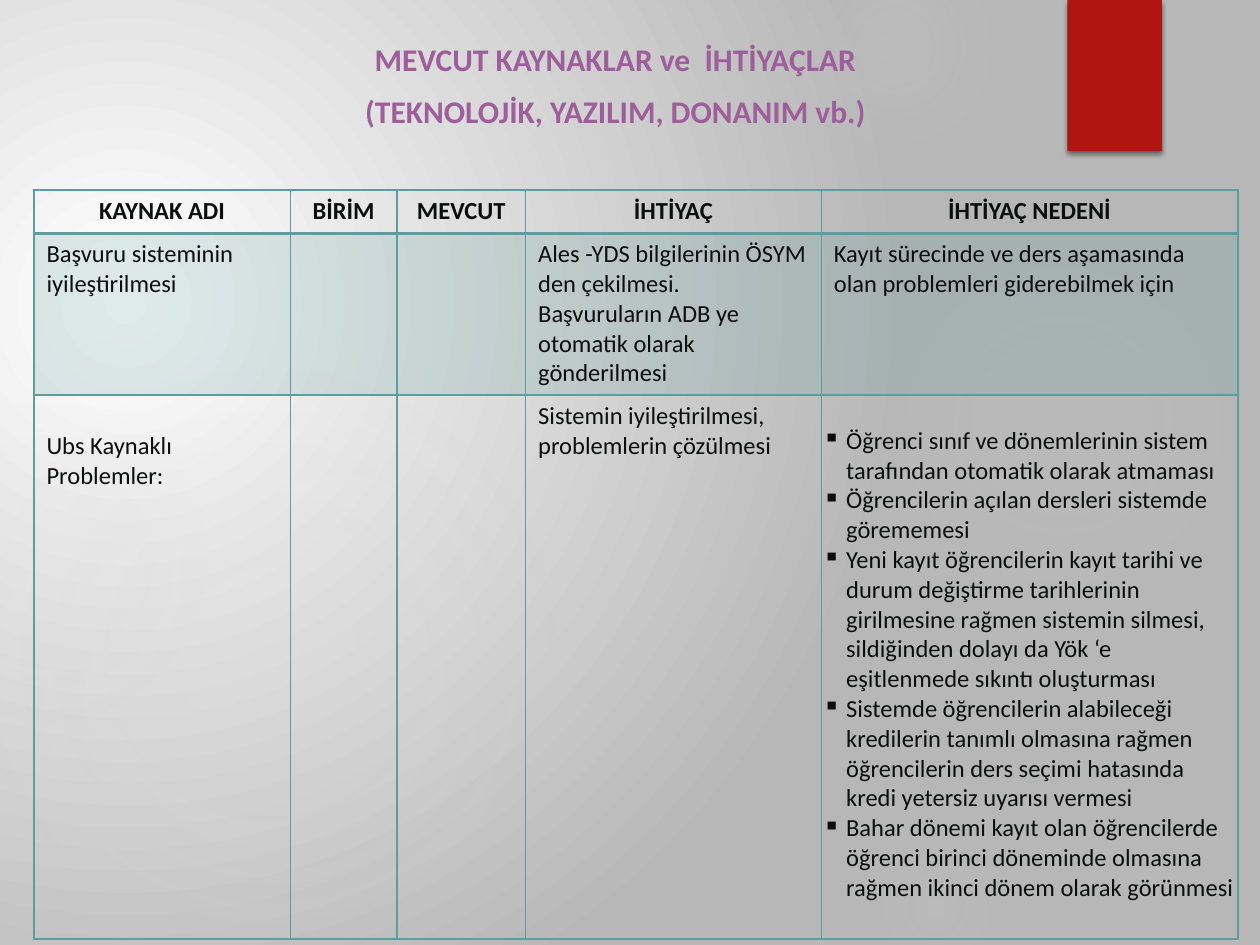
from dataclasses import dataclass

from lxml.etree import SubElement as Sub
from pptx import Presentation
from pptx.dml.color import RGBColor as RGB
from pptx.enum.shapes import MSO_SHAPE as SHAPE
from pptx.enum.text import MSO_ANCHOR as ANCHOR, MSO_AUTO_SIZE as AUTO, PP_ALIGN as ALIGN
from pptx.oxml.ns import qn
from pptx.util import Pt


@dataclass(frozen=True)
class Theme:
    font: str = "Calibri"
    title_size: int = 18
    body_size: int = 14
    title: str = "9E5E9B"
    text: str = "0C0D0D"
    accent: str = "B01513"
    line: str = "5F9C9D"
    glow: str = "D9D9D9"
    light: str = "FFFFFF"
    dark: str = "B7B7B7"
    shadow: str = "000000"


def add_color(parent, color, alpha=100):
    clr = Sub(parent, qn("a:srgbClr"), val=color)
    if alpha < 100:
        Sub(clr, qn("a:alpha"), val=str(alpha * 1000))


class Deck:
    def __init__(self, prs, theme):
        self.theme = theme
        self.s = prs.slides.add_slide(prs.slide_layouts[5])

    def radial(self, fill, owner, stops, focus):
        fill.gradient()
        grad = owner.find(".//" + qn("a:gradFill"))
        for child in list(grad):
            grad.remove(child)
        gs_lst = Sub(grad, qn("a:gsLst"))
        for pos, color, alpha in stops:
            add_color(Sub(gs_lst, qn("a:gs"), pos=str(pos * 1000)), color, alpha)
        path = Sub(grad, qn("a:path"), path="circle")
        Sub(path, qn("a:fillToRect"), {k: str(v * 1000) for k, v in zip("ltrb", focus)})

    def background(self):
        stops = [(0, self.theme.light, 100), (100, self.theme.dark, 100)]
        self.radial(self.s.background.fill, self.s.element, stops, (45, 65, 125, 100))

    def shape(self, kind, x, y, w, h):
        sp = self.s.shapes.add_shape(kind, Pt(x), Pt(y), Pt(w), Pt(h))
        sp.shadow.inherit = False
        sp.line.fill.background()
        return sp

    def glow(self, x, y, size, alphas, fade):
        sp = self.shape(SHAPE.OVAL, x, y, size, size)
        stops = [(pos, self.theme.glow, a) for pos, a in zip((0, 36, fade), (*alphas, 0))]
        self.radial(sp.fill, sp.element, stops, (50, 50, 50, 50))

    def ribbon(self, x, y, w, h):
        sp = self.shape(SHAPE.RECTANGLE, x, y, w, h)
        sp.fill.solid()
        sp.fill.fore_color.rgb = RGB.from_string(self.theme.accent)
        effects = sp.element.spPr.find(qn("a:effectLst"))
        shadow = Sub(effects, qn("a:outerShdw"), blurRad=str(Pt(3)), dist=str(Pt(2)),
                     dir="5400000", rotWithShape="0")
        add_color(shadow, self.theme.shadow, 45)

    def run(self, p, text, size, color, bold=False):
        r = p.add_run()
        r.text = text
        r.font.name = self.theme.font
        r.font.size = Pt(size)
        r.font.bold = bold
        r.font.color.rgb = RGB.from_string(color)

    def paragraphs(self, tf, lines, size, color, bold=False, align=ALIGN.LEFT):
        for i, line in enumerate(lines):
            p = tf.add_paragraph() if i else tf.paragraphs[0]
            p.alignment = align
            self.run(p, line, size, color, bold)
        return tf.paragraphs

    def title(self, lines, x, y, w, h):
        sp = self.s.shapes.title
        sp.left, sp.top, sp.width, sp.height = Pt(x), Pt(y), Pt(w), Pt(h)
        self.s.shapes.element.append(sp.element)
        tf = sp.text_frame
        tf.word_wrap = True
        tf.auto_size = AUTO.NONE
        tf.vertical_anchor = ANCHOR.BOTTOM
        for p in self.paragraphs(tf, lines, self.theme.title_size, self.theme.title,
                                 True, ALIGN.CENTER):
            p.line_spacing = 1.1
            p.space_after = Pt(6)

    def borders(self, cell, top, bottom):
        tc_pr = cell._tc.get_or_add_tcPr()
        for side, width in zip("LRTB", (1, 1, top, bottom)):
            ln = Sub(tc_pr, qn(f"a:ln{side}"), w=str(Pt(width)))
            add_color(Sub(ln, qn("a:solidFill")), self.theme.line)

    def tint(self, cell):
        cell.fill.solid()
        cell.fill.fore_color.rgb = RGB.from_string(self.theme.line)
        clr = cell._tc.tcPr.find(qn("a:solidFill")).find(qn("a:srgbClr"))
        Sub(clr, qn("a:alpha"), val="20000")

    def table(self, rows, x, y, widths, heights):
        tbl = self.s.shapes.add_table(len(rows), len(widths), Pt(x), Pt(y),
                                      Pt(sum(widths)), Pt(sum(heights))).table
        tbl.horz_banding = False
        for col, w in zip(tbl.columns, widths):
            col.width = Pt(w)
        for i, (row, h) in enumerate(zip(rows, heights)):
            tbl.rows[i].height = Pt(h)
            head = i == 0
            for j, lines in enumerate(row):
                cell = tbl.cell(i, j)
                self.borders(cell, 2 if i == 1 else 1, 2 if head else 1)
                if i == 1:
                    self.tint(cell)
                else:
                    cell.fill.background()
                self.paragraphs(cell.text_frame, lines, self.theme.body_size, self.theme.text,
                                head, ALIGN.CENTER if head else ALIGN.LEFT)
        return tbl

    def bullets(self, cell, indent):
        cell.margin_left = cell.margin_right = Pt(0.72)
        for p in cell.text_frame.paragraphs:
            p_pr = p._p.get_or_add_pPr()
            p_pr.set("marL", str(Pt(indent)))
            p_pr.set("indent", str(-Pt(indent)))
            Sub(p_pr, qn("a:buChar"), char="▪")


GLOWS = [
    (496, 132, 222, (7, 6), 69),
    (448, -36, 126, (14, 7), 73),
    (496, 480, 78, (9, 5), 66),
    (-12, 210, 330, (11, 10), 75),
    (-66, 228, 186, (8, 8), 72),
]
TITLE = ["MEVCUT KAYNAKLAR ve  İHTİYAÇLAR", "(TEKNOLOJİK, YAZILIM, DONANIM vb.)"]
PROBLEMS = [
    "Öğrenci sınıf ve dönemlerinin sistem tarafından otomatik olarak atmaması",
    "Öğrencilerin açılan dersleri sistemde görememesi",
    "Yeni kayıt öğrencilerin kayıt tarihi ve durum değiştirme tarihlerinin girilmesine rağmen "
    "sistemin silmesi, sildiğinden dolayı da Yök ‘e eşitlenmede sıkıntı oluşturması",
    "Sistemde öğrencilerin alabileceği kredilerin tanımlı olmasına rağmen öğrencilerin "
    "ders seçimi hatasında kredi yetersiz uyarısı vermesi",
    "Bahar dönemi kayıt olan öğrencilerde öğrenci birinci döneminde olmasına rağmen "
    "ikinci dönem olarak görünmesi",
]
ROWS = [
    [["KAYNAK ADI"], ["BİRİM"], ["MEVCUT"], ["İHTİYAÇ"], ["İHTİYAÇ NEDENİ"]],
    [["Başvuru sisteminin iyileştirilmesi"], [], [],
     ["Ales -YDS bilgilerinin ÖSYM den çekilmesi.",
      "Başvuruların ADB ye otomatik olarak gönderilmesi"],
     ["Kayıt sürecinde ve ders aşamasında olan problemleri giderebilmek için"]],
    [["Ubs Kaynaklı Problemler:"], [], [],
     ["Sistemin iyileştirilmesi, problemlerin çözülmesi"], PROBLEMS],
]


def main():
    prs = Presentation()
    prs.slide_width, prs.slide_height = Pt(720), Pt(540)
    deck = Deck(prs, Theme())
    deck.background()
    for glow in GLOWS:
        deck.glow(*glow)
    deck.ribbon(610, 0, 54, 86.4)
    deck.title(TITLE, 119.5, 17.3, 464.4, 60.5)
    tbl = deck.table(ROWS, 19.4, 108.7, (146.5, 61, 73.5, 169, 238), (24.5, 92, 311))
    source, reasons = tbl.cell(2, 0), tbl.cell(2, 4)
    source.margin_top = Pt(20.7)
    reasons.margin_top = Pt(17.8)
    deck.bullets(reasons, 13.5)
    prs.save("out.pptx")


if __name__ == "__main__":
    main()
